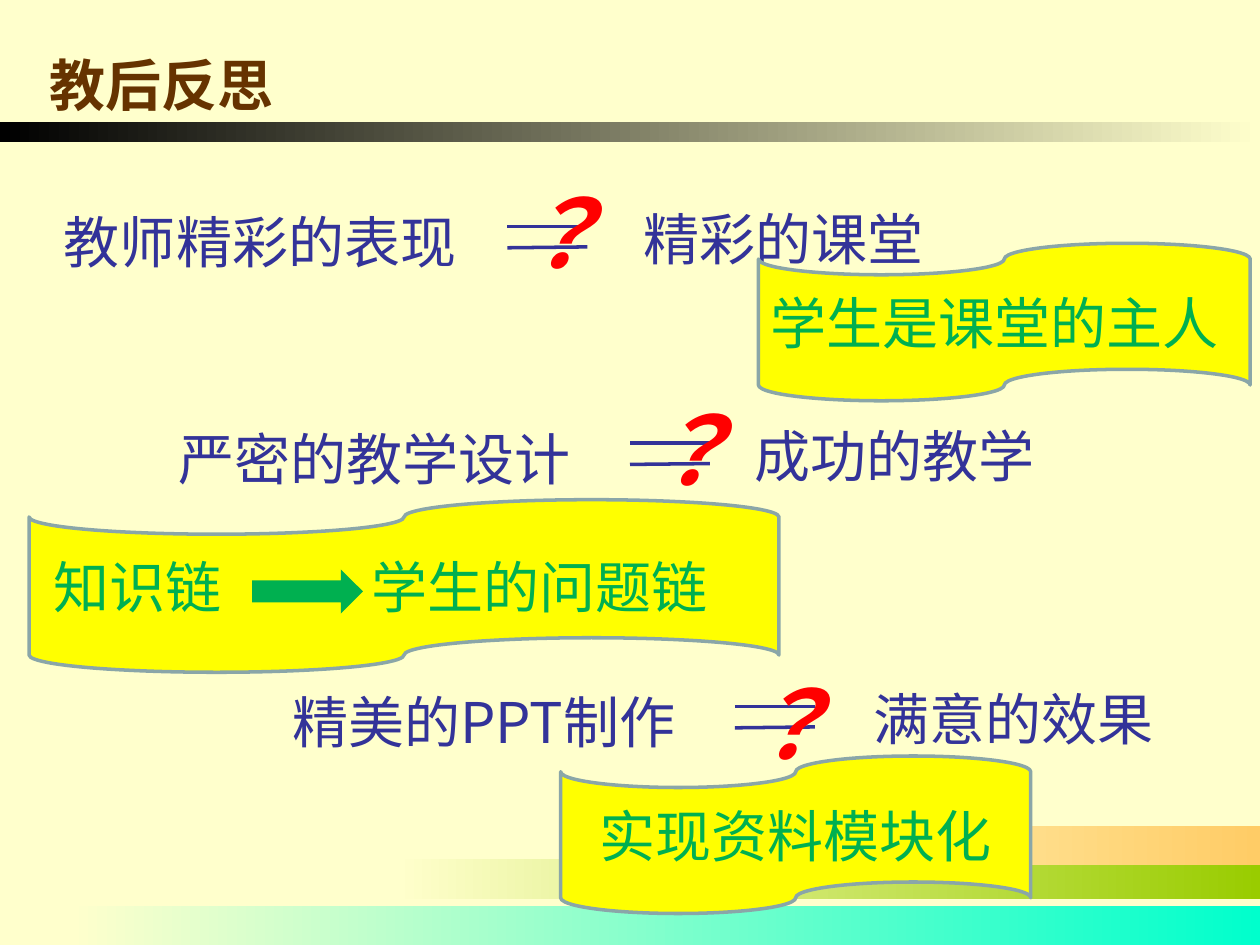
from dataclasses import dataclass

from lxml import etree
from pptx import Presentation
from pptx import util as u
from pptx.dml.color import RGBColor
from pptx.enum import shapes, text
from pptx.oxml import ns

COLORS = {
    "cream": "FFFFCC", "lime": "99CC00", "aqua": "00FFCC", "orange": "FFCC66",
    "black": "000000", "brown": "663300", "navy": "333399", "red": "FF0000",
    "yellow": "FFFF00", "green": "00B050", "edge": "8AA6A8",
}
CJK = "Noto Sans CJK JP"
Pt = u.Pt


@dataclass
class Band:
    x: float
    y: float
    h: float
    start: str
    end: str


@dataclass
class Row:
    y: float
    left: str
    left_x: float
    left_w: float
    right: str
    right_x: float
    right_w: float
    equals_x: float
    mark_x: float
    mark_y: float


@dataclass
class Tape:
    x: float
    y: float
    w: float
    h: float
    label: str
    align: text.PP_ALIGN = text.PP_ALIGN.LEFT
    inset: float = 7.2
    tab: float = 0


BANDS = [
    Band(226.8, 491, 22.5, "cream", "lime"),
    Band(39.6, 517.5, 22.5, "cream", "aqua"),
    Band(354, 472, 22.5, "cream", "orange"),
    Band(0, 69.8, 11.5, "black", "cream"),
]
ROWS = [
    Row(115.2, "教师精彩的表现", 29.5, 255, "精彩的课堂", 360.7, 194, 290, 270, 95.8),
    Row(239, "严密的教学设计", 95, 256, "成功的教学", 424, 197, 360, 344.2, 219.6),
    Row(389.5, "精美的PPT制作", 160, 258, "满意的效果", 492, 284, 420, 400.3, 376.6),
]
TAPES = [
    Tape(433.4, 139, 281, 90, "学生是课堂的主人"),
    Tape(16.6, 285.6, 428.5, 98.6, "知识链\t学生的问题链", inset=14, tab=181.5),
    Tape(320.4, 432, 268.6, 90, "实现资料模块化", text.PP_ALIGN.CENTER),
]


def rgb(name: str) -> RGBColor:
    return RGBColor.from_string(COLORS[name])


def write(tf, content: str, *, color: str, size: float = 32, font: str = CJK,
          bold: bool = False, italic: bool = False,
          align: text.PP_ALIGN = text.PP_ALIGN.LEFT) -> None:
    tf.word_wrap = True
    p = tf.paragraphs[0]
    p.alignment = align
    r = p.add_run()
    r.text = content
    f = r.font
    f.size, f.bold, f.italic, f.name = Pt(size), bold, italic, font
    f.color.rgb = rgb(color)
    etree.SubElement(r._r.get_or_add_rPr(), ns.qn("a:ea"), typeface=font)


def add_text(s, x: float, y: float, w: float, h: float, content: str, **fmt) -> None:
    tf = s.shapes.add_textbox(Pt(x), Pt(y), Pt(w), Pt(h)).text_frame
    write(tf, content, **fmt)
    tf.auto_size = text.MSO_AUTO_SIZE.SHAPE_TO_FIT_TEXT


def add_shape(s, kind, x: float, y: float, w: float, h: float, fill: str = ""):
    sp = s.shapes.add_shape(kind, Pt(x), Pt(y), Pt(w), Pt(h))
    sp.shadow.inherit = False
    sp.line.fill.background()
    if fill:
        sp.fill.solid()
        sp.fill.fore_color.rgb = rgb(fill)
    return sp


def add_band(s, b: Band) -> None:
    sp = add_shape(s, shapes.MSO_SHAPE.RECTANGLE, b.x, b.y, 720 - b.x, b.h)
    sp.fill.gradient()
    sp.fill.gradient_angle = 0
    for stop, name in zip(sp.fill.gradient_stops, (b.start, b.end)):
        stop.color.rgb = rgb(name)


def add_row(s, row: Row) -> None:
    add_text(s, row.left_x, row.y, row.left_w, 46, row.left, color="navy")
    add_text(s, row.right_x, row.y - 1.7, row.right_w, 46, row.right, color="navy")
    # Two strokes of the equals sign
    for dy, rise in ((14.3, 0), (26.4, 0.5)):
        y = row.y + dy
        cx = s.shapes.add_connector(shapes.MSO_CONNECTOR.STRAIGHT, Pt(row.equals_x),
                                    Pt(y), Pt(row.equals_x + 45.7), Pt(y - rise))
        cx.line.color.rgb = rgb("navy")
        cx.line.width = Pt(2)
        etree.SubElement(cx._element.spPr, ns.qn("a:effectLst"))


def add_tape(s, t: Tape) -> None:
    sp = add_shape(s, shapes.MSO_SHAPE.FLOWCHART_PUNCHED_TAPE, t.x, t.y, t.w, t.h, "yellow")
    sp.line.color.rgb = rgb("edge")
    sp.line.width = Pt(2)
    tf = sp.text_frame
    tf.vertical_anchor = text.MSO_ANCHOR.MIDDLE
    tf.margin_left = Pt(t.inset)
    if t.tab:
        pPr = tf.paragraphs[0]._p.get_or_add_pPr()
        tabs = etree.SubElement(pPr, ns.qn("a:tabLst"))
        etree.SubElement(tabs, ns.qn("a:tab"), pos=str(Pt(t.tab)), algn="l")
    write(tf, t.label, color="green", align=t.align)


def main() -> None:
    prs = Presentation()
    prs.slide_width, prs.slide_height = Pt(720), Pt(540)
    s = prs.slides.add_slide(prs.slide_layouts[6])
    s.background.fill.solid()
    s.background.fill.fore_color.rgb = rgb("cream")

    # Background bands and title
    for band in BANDS:
        add_band(s, band)
    add_text(s, 21, 25.2, 179, 45.5, "教后反思", color="brown", font="Arial", bold=True)

    # Statements, then the question marks over their equals signs
    for row in ROWS:
        add_row(s, row)
    for row in ROWS:
        add_text(s, row.mark_x, row.mark_y, 98.6, 72.7, "？", color="red", size=54,
                 bold=True, italic=True, align=text.PP_ALIGN.CENTER)

    # Answers on tapes, with the arrow between the two chains
    for tape in TAPES:
        add_tape(s, tape)
    add_shape(s, shapes.MSO_SHAPE.RIGHT_ARROW, 144, 325.4, 63.4, 25.2, "green")

    prs.save("out.pptx")


if __name__ == "__main__":
    main()
